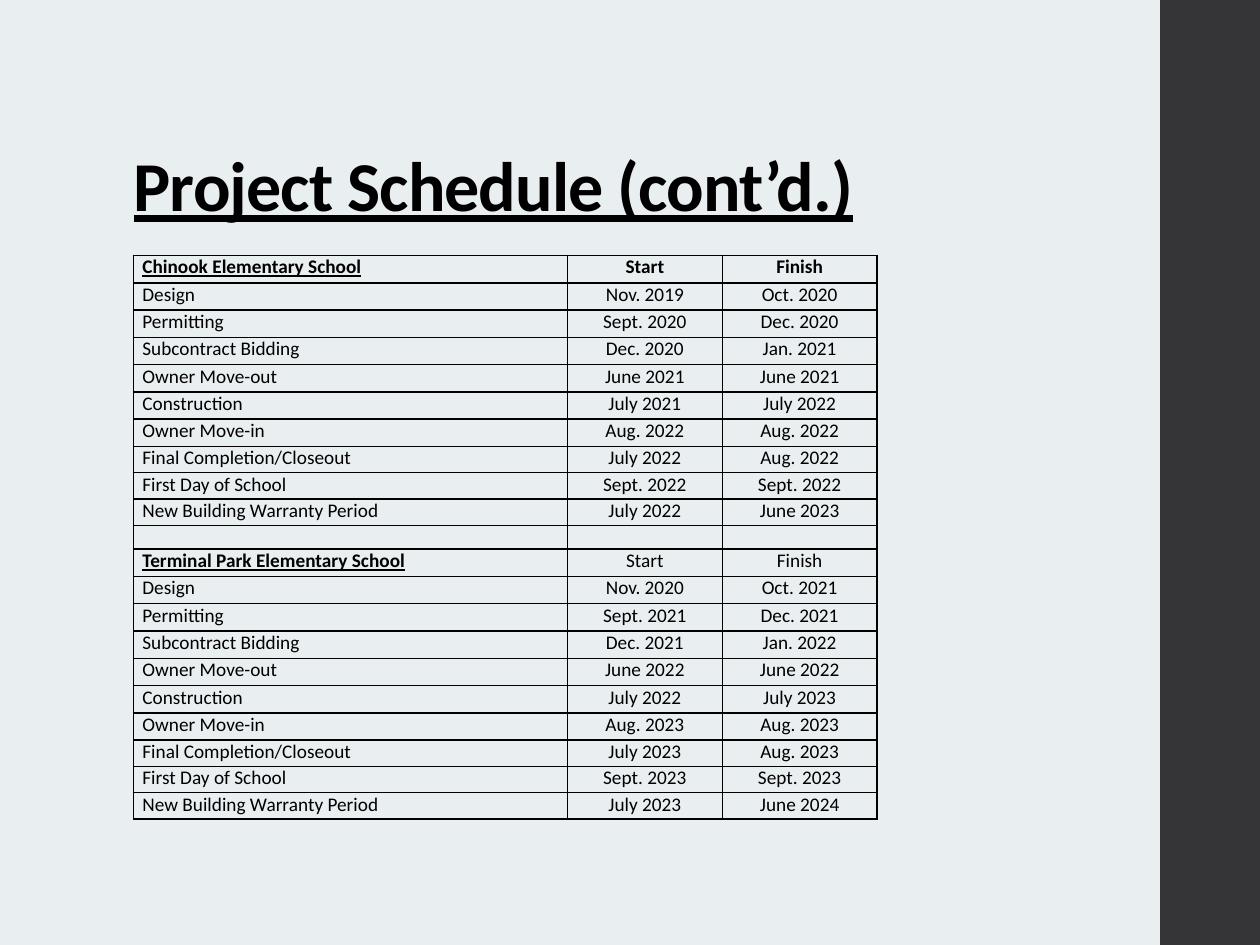
"""Build the project schedule slide with its two-school timetable."""
import pptx
import pptx.dml.color
import pptx.enum.shapes
import pptx.enum.text
import pptx.oxml
import pptx.oxml.ns
import pptx.util
from pptx.util import Cm, Pt

BLACK = pptx.dml.color.RGBColor(0x00, 0x00, 0x00)
PALE = pptx.dml.color.RGBColor(0xE9, 0xEE, 0xF1)
CHARCOAL = pptx.dml.color.RGBColor(0x35, 0x35, 0x37)

PHASES = [
    "Design", "Permitting", "Subcontract Bidding", "Owner Move-out", "Construction",
    "Owner Move-in", "Final Completion/Closeout", "First Day of School",
    "New Building Warranty Period",
]
CHINOOK = [
    ("Nov. 2019", "Oct. 2020"), ("Sept. 2020", "Dec. 2020"), ("Dec. 2020", "Jan. 2021"),
    ("June 2021", "June 2021"), ("July 2021", "July 2022"), ("Aug. 2022", "Aug. 2022"),
    ("July 2022", "Aug. 2022"), ("Sept. 2022", "Sept. 2022"), ("July 2022", "June 2023"),
]
TERMINAL_PARK = [
    ("Nov. 2020", "Oct. 2021"), ("Sept. 2021", "Dec. 2021"), ("Dec. 2021", "Jan. 2022"),
    ("June 2022", "June 2022"), ("July 2022", "July 2023"), ("Aug. 2023", "Aug. 2023"),
    ("July 2023", "Aug. 2023"), ("Sept. 2023", "Sept. 2023"), ("July 2023", "June 2024"),
]
BLANK_ROW = ("", "", "")


def school_rows(school, dates):
    phases = [(phase, *span) for phase, span in zip(PHASES, dates)]
    return [(school, "Start", "Finish")] + phases


class ScheduleSlide:
    font = "Calibri"
    text_size = Pt(11)
    title_size = Pt(40)
    border_width = Pt(1)

    def __init__(self, deck):
        self.page = deck.slides.add_slide(deck.slide_layouts[5])
        self.page.background.fill.solid()
        self.page.background.fill.fore_color.rgb = PALE

    def style(self, span, size, bold=False, underline=False):
        span.font.name = self.font
        span.font.size = size
        span.font.bold = bold
        span.font.underline = underline
        span.font.color.rgb = BLACK

    def panel(self, left, top, width, height):
        kind = pptx.enum.shapes.MSO_SHAPE.RECTANGLE
        box = self.page.shapes.add_shape(kind, left, top, width, height)
        box.shadow.inherit = False
        box.fill.solid()
        box.fill.fore_color.rgb = CHARCOAL
        box.line.fill.background()

    def title(self, text, left, top, width, height):
        box = self.page.shapes.title
        box.left, box.top, box.width, box.height = left, top, width, height
        frame = box.text_frame
        frame.text = text
        frame.word_wrap = True
        frame.auto_size = pptx.enum.text.MSO_AUTO_SIZE.NONE
        frame.vertical_anchor = pptx.enum.text.MSO_ANCHOR.BOTTOM
        para = frame.paragraphs[0]
        para.alignment = pptx.enum.text.PP_ALIGN.LEFT
        para.line_spacing = 0.9
        span = para.runs[0]
        self.style(span, self.title_size, bold=True, underline=True)
        span.font._element.set("spc", "-50")

    def borders(self, cell):
        properties = cell._tc.get_or_add_tcPr()
        for position, side in enumerate(("lnL", "lnR", "lnT", "lnB")):
            line = pptx.oxml.parse_xml(
                f'<a:{side} {pptx.oxml.ns.nsdecls("a")} w="{int(self.border_width)}">'
                f'<a:solidFill><a:srgbClr val="{BLACK}"/></a:solidFill></a:{side}>'
            )
            properties.insert(position, line)

    def cell(self, cell, text, centred, bold, underline):
        cell.fill.background()
        self.borders(cell)
        cell.margin_left = cell.margin_right = Cm(0.18)
        cell.margin_top = cell.margin_bottom = 0
        para = cell.text_frame.paragraphs[0]
        if not text:
            para._p.append(pptx.oxml.parse_xml(
                f'<a:endParaRPr {pptx.oxml.ns.nsdecls("a")} '
                f'sz="{int(self.text_size.pt * 100)}"/>'
            ))
            return
        para.text = text
        para.space_before = para.space_after = Pt(2)
        if centred:
            para.alignment = pptx.enum.text.PP_ALIGN.CENTER
        self.style(para.runs[0], self.text_size, bold, underline)

    def table(self, rows, left, top, widths, heights):
        frame = self.page.shapes.add_table(
            len(rows), len(widths), left, top, sum(widths), sum(heights))
        table = frame.table
        table.first_row = table.horz_banding = False
        for column, width in zip(table.columns, widths):
            column.width = width
        for r, (values, height) in enumerate(zip(rows, heights)):
            table.rows[r].height = height
            heading = values[1] == "Start"
            for c, text in enumerate(values):
                underline = heading and c == 0
                bold = underline or r == 0
                self.cell(table.cell(r, c), text, c > 0, bold, underline)


def main():
    deck = pptx.Presentation()
    deck.slide_width, deck.slide_height = Cm(25.4), Cm(19.05)
    slide = ScheduleSlide(deck)
    slide.panel(Cm(23.39), 0, Cm(2.01), deck.slide_height)
    slide.title("Project Schedule (cont’d.)", Cm(2.44), Cm(1.02), Cm(18.44), Cm(3.68))
    rows = school_rows("Chinook Elementary School", CHINOOK)
    rows += [BLANK_ROW]
    rows += school_rows("Terminal Park Elementary School", TERMINAL_PARK)
    block = [Cm(0.55)] * 7 + [Cm(0.53)] * 3
    heights = block + [Cm(0.47)] + block
    slide.table(rows, Cm(2.69), Cm(5.15), [Cm(8.75), Cm(3.12), Cm(3.12)], heights)
    deck.save("out.pptx")


if __name__ == "__main__":
    main()
